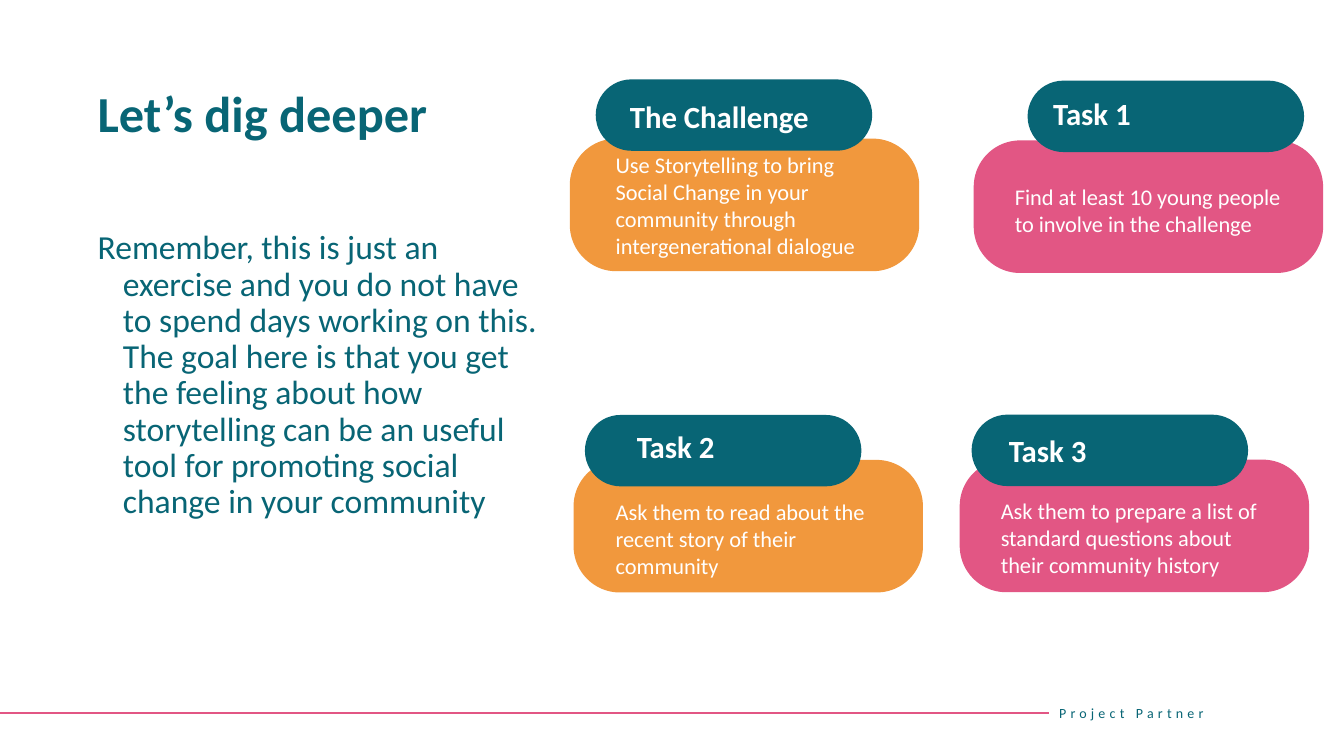
from lxml.etree import SubElement
from pptx import Presentation
from pptx.dml.color import RGBColor
from pptx.enum.shapes import MSO_CONNECTOR, MSO_SHAPE
from pptx.enum.text import MSO_ANCHOR, MSO_AUTO_SIZE, PP_ALIGN
from pptx.oxml.ns import qn
from pptx.util import Pt

TEAL, ORANGE, PINK, WHITE = "086575", "F1983D", "E25684", "FFFFFF"


def color(hex_string):
    return RGBColor.from_string(hex_string)


def write(box, text, place, size=16, fill=WHITE, bold=False, anchor=MSO_ANCHOR.TOP,
          line_spacing=1.0, hanging=0, tracking=0):
    """Place a box (left, top, width, height in points) and fill it with one formatted paragraph."""
    box.left, box.top, box.width, box.height = [Pt(length) for length in place]
    frame = box.text_frame
    frame.word_wrap = True
    frame.auto_size = MSO_AUTO_SIZE.NONE
    frame.vertical_anchor = anchor
    para = frame.paragraphs[0]
    para.alignment = PP_ALIGN.LEFT
    para.line_spacing = line_spacing
    para.space_before = Pt(0)
    properties = para._p.get_or_add_pPr()
    properties.set("marL", str(Pt(hanging)))
    properties.set("indent", str(-Pt(hanging)))
    SubElement(properties, qn("a:buNone"))
    span = para.add_run()
    span.text = text
    span.font.name = "Calibri"
    span.font.size = Pt(size)
    span.font.bold = bold
    span.font.color.rgb = color(fill)
    if tracking:
        span._r.get_or_add_rPr().set("spc", str(tracking * 100))


deck = Presentation()
deck.slide_width, deck.slide_height = Pt(960), Pt(540)
page = deck.slides.add_slide(deck.slide_layouts[1])
page.background.fill.solid()
page.background.fill.fore_color.rgb = color(WHITE)

# Footer
footer_line = page.shapes.add_connector(
    MSO_CONNECTOR.STRAIGHT, Pt(0), Pt(509), Pt(749.5), Pt(509))
footer_line.line.color.rgb = color(PINK)
footer_line.line.width = Pt(1.5)
SubElement(footer_line._element.spPr, qn("a:effectLst"))
write(page.shapes.add_textbox(0, 0, 0, 0), "Project Partner", (749.5, 494.6, 196.6, 28.8),
      size=10, fill=TEAL, anchor=MSO_ANCHOR.MIDDLE, tracking=3)

# Left column
write(page.shapes.title, "Let’s dig deeper", (62.6, 59.8, 331.2, 63.4),
      size=36, fill=TEAL, bold=True, line_spacing=0.9)
write(page.placeholders[1],
      "Remember, this is just an exercise and you do not have to spend days working on this. "
      "The goal here is that you get the feeling about how storytelling can be an useful tool "
      "for promoting social change in your community",
      (62.6, 161.3, 331.2, 303), size=24, fill=TEAL, line_spacing=0.9, hanging=18)

# Cards: heading, text, fill, then left and top of panel, tab, heading and text
cards = [
    ("The Challenge",
     "Use Storytelling to bring Social Change in your community through "
     "intergenerational dialogue",
     ORANGE, (407, 99), (425.5, 56.7), (442.8, 66.2), (432.7, 104.4)),
    ("Task 1", "Find at least 10 young people to involve in the challenge",
     PINK, (695.5, 100.3), (734, 57.6), (745.2, 64.1), (717.8, 127.4)),
    ("Task 2", "Ask them to read about the recent story of their community",
     ORANGE, (409.7, 328.5), (417.8, 296.4), (447.8, 301.7), (432.7, 352.1)),
    ("Task 3", "Ask them to prepare a list of standard questions about their community history",
     PINK, (685.5, 328.3), (694, 296.2), (713.5, 304.6), (707.8, 351.4)),
]
for heading, text, fill, panel_at, tab_at, heading_at, text_at in cards:
    for (left, top), (width, height), tint, rounding in [
            (panel_at, (249.6, 94.7), fill, 0.35), (tab_at, (197.5, 51), TEAL, 0.5)]:
        shape = page.shapes.add_shape(
            MSO_SHAPE.ROUNDED_RECTANGLE, Pt(left), Pt(top), Pt(width), Pt(height))
        shape.adjustments[0] = rounding
        shape.fill.solid()
        shape.fill.fore_color.rgb = color(tint)
        shape.line.fill.background()
        shape.shadow.inherit = False
    write(page.shapes.add_textbox(0, 0, 0, 0), heading, (*heading_at, 170, 33.8),
          size=22, bold=True)
    write(page.shapes.add_textbox(0, 0, 0, 0), text, (*text_at, 205, 85))

deck.save("out.pptx")
